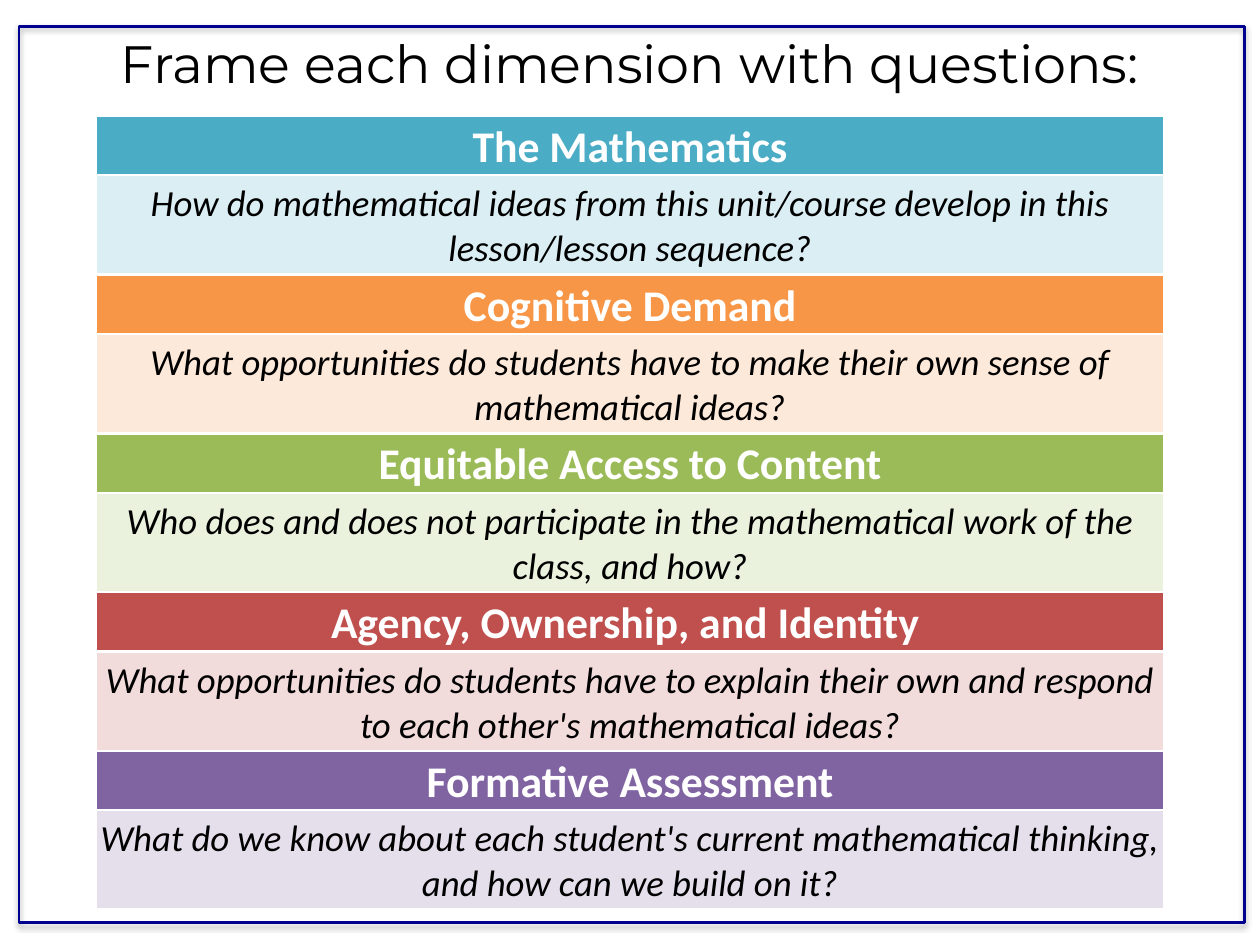
from dataclasses import dataclass

from lxml import etree
from pptx import Presentation
from pptx.dml.color import RGBColor
from pptx.enum import shapes, text
from pptx.oxml import ns
from pptx.util import Inches, Pt

LEFT, FIRST_TOP, PITCH, WIDTH = 0.76, 0.92, 1.26, 8.48
HEADING_HEIGHT, QUESTION_HEIGHT = 0.47, 0.79
HEADING_FONT = {"name": "Calibri", "size": Pt(25), "bold": True, "italic": False}
QUESTION_FONT = {"name": "Calibri", "size": Pt(21), "bold": False, "italic": True}
CELL_FORMAT = {
    "margin_left": Inches(0.03),
    "margin_right": Inches(0.03),
    "margin_top": Inches(0.03),
    "margin_bottom": 0,
    "vertical_anchor": text.MSO_ANCHOR.MIDDLE,
}


@dataclass
class Dimension:
    heading: str
    question: str
    dark: str
    light: str


DIMENSIONS = [
    Dimension("The Mathematics",
              "How do mathematical ideas from this unit/course develop in this lesson/lesson sequence?",
              "4BACC6", "DAEEF3"),
    Dimension("Cognitive Demand",
              "What opportunities do students have to make their own sense of mathematical ideas?",
              "F79646", "FDE9D9"),
    Dimension("Equitable Access to Content",
              "Who does and does not participate in the mathematical work of the class, and how?",
              "9BBB59", "EAF1DD"),
    Dimension("Agency, Ownership, and Identity ",
              "What opportunities do students have to explain their own and respond "
              "to each other's mathematical ideas?",
              "C0504D", "F2DBDB"),
    Dimension("Formative Assessment",
              "What do we know about each student's current mathematical thinking, "
              "and how can we build on it?",
              "8064A2", "E5DFEC"),
]


def color(value: str) -> RGBColor:
    return RGBColor.from_string(value)


def apply(target, values: dict) -> None:
    for name, value in values.items():
        setattr(target, name, value)


def write(frame, words: str, font: dict, ink: str) -> None:
    """Fill a text frame with one centred paragraph."""
    paragraph = frame.paragraphs[0]
    paragraph.alignment = text.PP_ALIGN.CENTER
    run = paragraph.add_run()
    run.text = words
    apply(run.font, font)
    run.font.color.rgb = color(ink)


def add_borders(cell, line_color: str, width: float) -> None:
    properties = cell._tc.get_or_add_tcPr()
    for index, side in enumerate(("lnL", "lnR", "lnT", "lnB")):
        line = etree.Element(ns.qn(f"a:{side}"), w=str(Pt(width)))
        fill = etree.SubElement(line, ns.qn("a:solidFill"))
        etree.SubElement(fill, ns.qn("a:srgbClr"), val=line_color)
        properties.insert(index, line)


def add_dimension(slide, dimension: Dimension, top: float) -> None:
    """Add a two-row table: heading above question."""
    table = slide.shapes.add_table(
        2, 1, Inches(LEFT), Inches(top), Inches(WIDTH),
        Inches(HEADING_HEIGHT + QUESTION_HEIGHT)).table
    apply(table, {"first_row": False, "horz_banding": False})
    rows = [
        (HEADING_HEIGHT, dimension.heading, HEADING_FONT, "FFFFFF", dimension.dark),
        (QUESTION_HEIGHT, dimension.question, QUESTION_FONT, "000000", dimension.light),
    ]
    for index, (height, words, font, ink, fill) in enumerate(rows):
        table.rows[index].height = Inches(height)
        cell = table.cell(index, 0)
        apply(cell, CELL_FORMAT)
        cell.fill.solid()
        cell.fill.fore_color.rgb = color(fill)
        add_borders(cell, "FFFFFF", 1.5)
        write(cell.text_frame, words, font, ink)


def add_title(slide, words: str) -> None:
    title = slide.shapes.title
    apply(title, {"left": Inches(0.5), "top": Inches(0.19),
                  "width": Inches(9), "height": Inches(0.62)})
    apply(title.text_frame, {"word_wrap": True, "auto_size": text.MSO_AUTO_SIZE.NONE,
                             "vertical_anchor": text.MSO_ANCHOR.MIDDLE})
    write(title.text_frame, words, {"name": "Montserrat", "size": Pt(30)}, "000000")


def add_frame(slide) -> None:
    """Outline the slide with an unfilled rectangle and a soft shadow."""
    frame = slide.shapes.add_shape(
        shapes.MSO_SHAPE.RECTANGLE, Inches(0.15), Inches(0.21), Inches(9.73), Inches(7.11))
    frame.fill.background()
    frame.line.color.rgb = color("000090")
    frame.line.width = Pt(1.5)
    frame.shadow.inherit = False
    effects = frame._element.spPr.find(ns.qn("a:effectLst"))
    shadow = etree.SubElement(effects, ns.qn("a:outerShdw"), blurRad=str(Pt(3.1)),
                              dist=str(Pt(1.8)), dir="5400000", rotWithShape="0")
    shade = etree.SubElement(shadow, ns.qn("a:srgbClr"), val="000000")
    etree.SubElement(shade, ns.qn("a:alpha"), val="35000")


def main() -> None:
    presentation = Presentation()
    presentation.slide_width, presentation.slide_height = Inches(10), Inches(7.5)
    slide = presentation.slides.add_slide(presentation.slide_layouts[5])
    add_title(slide, "Frame each dimension with questions:")
    for index, dimension in enumerate(DIMENSIONS):
        add_dimension(slide, dimension, FIRST_TOP + index * PITCH)
    add_frame(slide)
    presentation.save("out.pptx")


if __name__ == "__main__":
    main()
